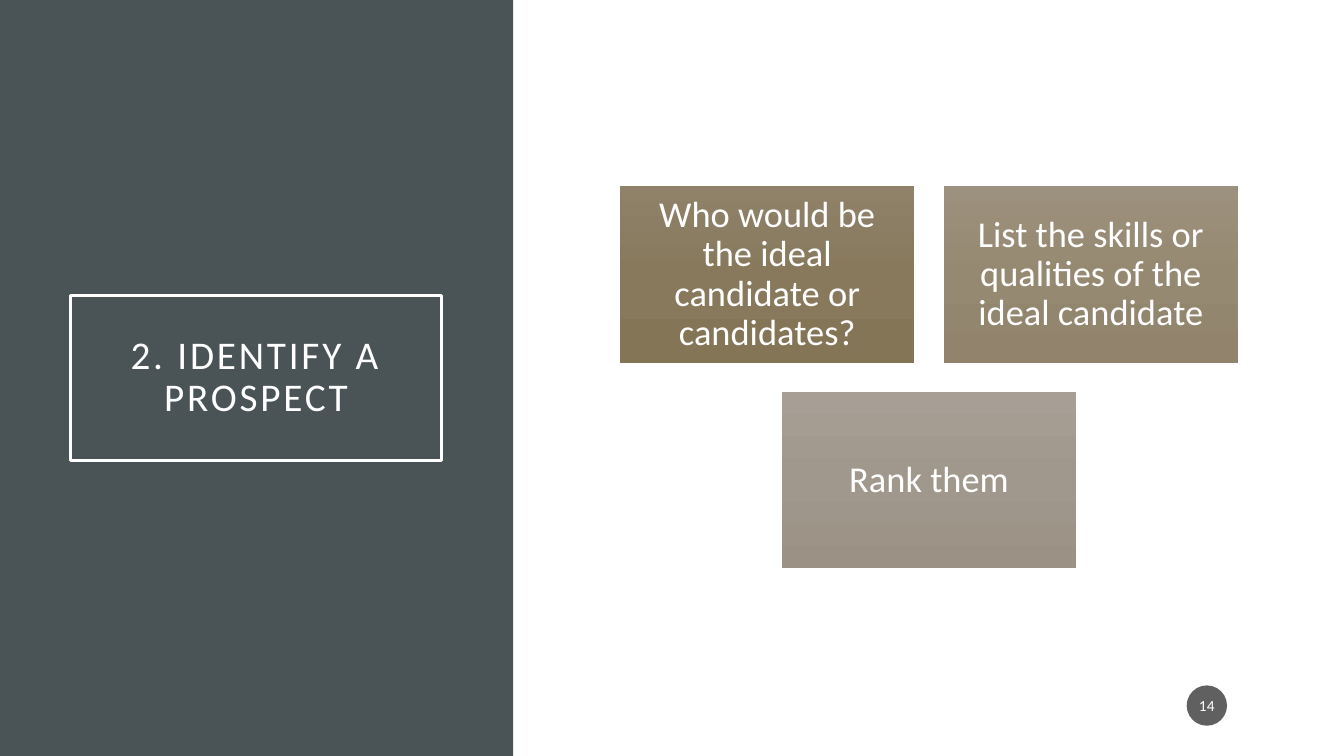
import copy
import pptx
import pptx.util
import pptx.dml.color
import pptx.enum.shapes
import pptx.enum.text

Inches, Pt = pptx.util.Inches, pptx.util.Pt
Kind = pptx.enum.shapes.MSO_SHAPE

# Content
TITLE = "2. IDENTIFY A PROSPECT"
NUMBER = "14"
ROWS = [
    [("Who would be the ideal candidate or candidates?", ("8F8269", "88795C", "847557")),
     ("List the skills or qualities of the ideal candidate", ("9C917E", "968972", "91836C"))],
    [("Rank them", ("A79F95", "A0988C", "9B9285"))],
]

THEME = {
    "font": "Calibri", "text": "FFFFFF", "panel": "4A5356", "badge": "1D1D1D",
    "title": 28, "card": 26, "number": 11,
}

# Card grid
LEFT, TOP, WIDE, HIGH, GAP = 6.15, 1.85, 2.92, 1.75, 0.29
SPAN = 2 * WIDE + GAP


def color(code):
    return pptx.dml.color.RGBColor.from_string(code)


def add_box(slide, kind, x, y, w, h, fill=None):
    box = slide.shapes.add_shape(kind, Inches(x), Inches(y), Inches(w), Inches(h))
    box.shadow.inherit = False
    box.line.fill.background()
    if fill:
        box.fill.solid()
        box.fill.fore_color.rgb = color(fill)
    else:
        box.fill.background()
    return box


def write(box, text, size, side, edge, space=None):
    frame = box.text_frame
    frame.word_wrap = True
    frame.vertical_anchor = pptx.enum.text.MSO_ANCHOR.MIDDLE
    frame.margin_left = frame.margin_right = Inches(side)
    frame.margin_top = frame.margin_bottom = Inches(edge)
    para = frame.paragraphs[0]
    para.text = text
    para.alignment = pptx.enum.text.PP_ALIGN.CENTER
    para.line_spacing = space
    para.font.name = THEME["font"]
    para.font.size = Pt(THEME[size])
    para.font.color.rgb = color(THEME["text"])
    return para


def shade(box, codes):
    """Fill from top to bottom through three evenly spaced colours."""
    box.fill.gradient()
    box.fill.gradient_angle = 270
    first = box.fill._fill._gradFill.gsLst[0]
    first.addnext(copy.deepcopy(first))
    for i, (stop, code) in enumerate(zip(box.fill.gradient_stops, codes)):
        stop.position = i / 2
        stop.color.rgb = color(code)


def main():
    deck = pptx.Presentation()
    deck.slide_width, deck.slide_height = Inches(13.33), Inches(7.5)
    slide = deck.slides.add_slide(deck.slide_layouts[6])

    # Side panel and title
    add_box(slide, Kind.RECTANGLE, 0, 0, 5.09, 7.5, THEME["panel"])
    title = add_box(slide, Kind.RECTANGLE, 0.7, 2.93, 3.68, 1.64)
    title.line.color.rgb = color(THEME["text"])
    title.line.width = Pt(2.5)
    para = write(title, TITLE, "title", 0.2, 0.2, 0.9)
    para.runs[0].font._element.set("spc", "200")

    # Cards, each row centred
    for r, row in enumerate(ROWS):
        start = LEFT + (SPAN - len(row) * (WIDE + GAP) + GAP) / 2
        for c, (text, codes) in enumerate(row):
            card = add_box(slide, Kind.RECTANGLE, start + c * (WIDE + GAP),
                           TOP + r * (HIGH + GAP), WIDE, HIGH)
            shade(card, codes)
            write(card, text, "card", 0.11, 0.11, 0.9)

    # Slide number badge
    badge = add_box(slide, Kind.OVAL, 11.77, 6.8, 0.4, 0.4, THEME["badge"])
    tint = badge.fill._xPr.solidFill[0] if hasattr(badge.fill._xPr, "solidFill") \
        else badge.fill._xPr.eg_fillProperties[0]
    pptx.oxml.xmlchemy.OxmlElement("a:alpha")
    alpha = pptx.oxml.xmlchemy.OxmlElement("a:alpha")
    alpha.set("val", "70000")
    tint.append(alpha)
    write(badge, NUMBER, "number", 0.02, 0.05)

    deck.save("out.pptx")


if __name__ == "__main__":
    main()
